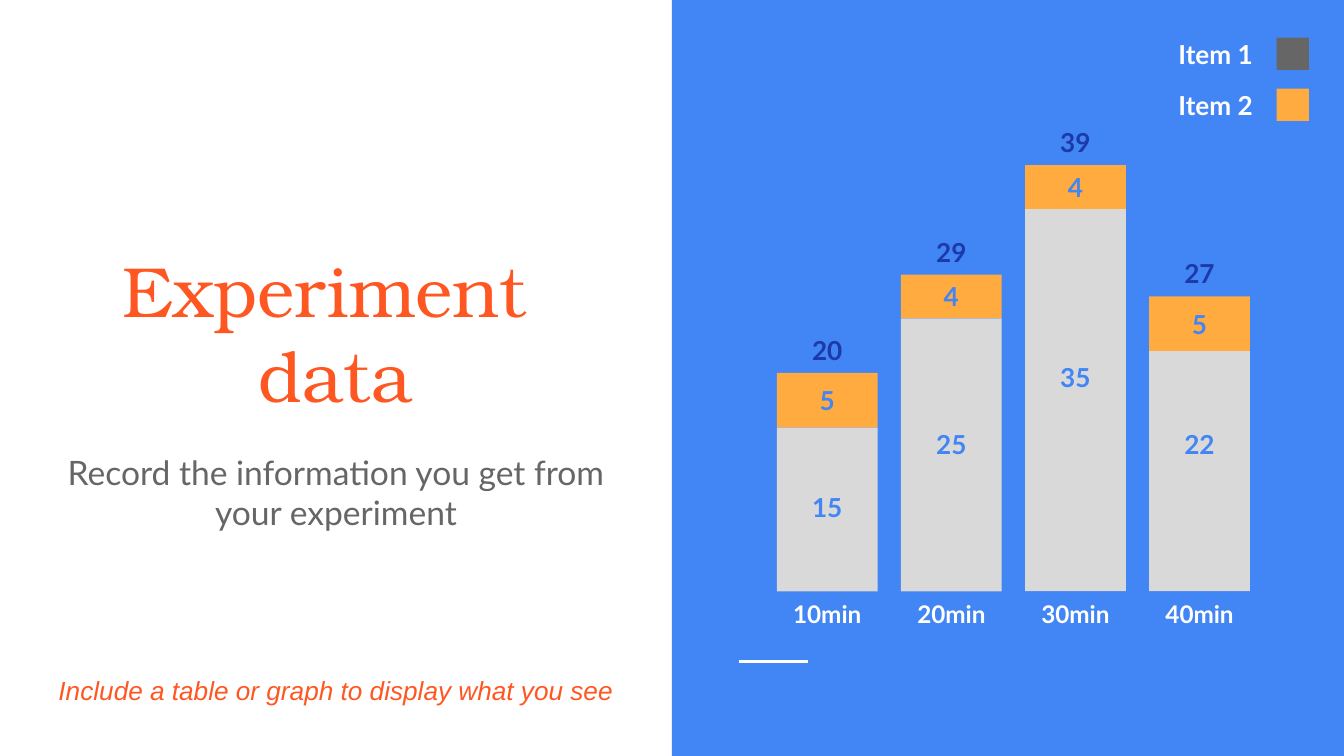
from collections import namedtuple

from lxml.etree import SubElement
from pptx import Presentation
from pptx.dml.color import RGBColor
from pptx.enum.shapes import MSO_CONNECTOR, MSO_SHAPE
from pptx.enum.text import MSO_ANCHOR, MSO_AUTO_SIZE, PP_ALIGN
from pptx.oxml.ns import qn
from pptx.util import Inches, Pt

Box = namedtuple("Box", "left top width height")
Bar = namedtuple("Bar", "label item1 item2 lift")

PAGE_WIDTH = 10
PAGE_HEIGHT = PAGE_WIDTH * 9 / 16
COLORS = {
    "white": "FFFFFF",
    "blue": "4285F4",
    "navy": "1C3AA9",
    "red": "FF5722",
    "orange": "FFAB40",
    "dark": "666666",
    "light": "D9D9D9",
}
FORMATS = {
    "title": {"size": Pt(38), "name": "TeX Gyre Bonum"},
    "subtitle": {"size": Pt(18), "name": "Lato"},
    "caption": {"size": Pt(14), "name": "Arial", "italic": True},
    "label": {"size": Pt(14), "name": "Lato", "bold": True},
    "axis": {"size": Pt(13), "name": "Lato", "bold": True},
}
BARS = [
    Bar("10min", 15, 5, 0.02),
    Bar("20min", 25, 4, 0.08),
    Bar("30min", 35, 4, 0.17),
    Bar("40min", 22, 5, 0.2),
]
LEGEND = [("Item 1", "dark"), ("Item 2", "orange")]
BAR_WIDTH = 0.75
LABEL_HEIGHT = 0.34


def rgb(color):
    """Return the named colour."""
    return RGBColor.from_string(COLORS[color])


def place(shape, box):
    """Move a shape to a box given in inches."""
    for name, value in box._asdict().items():
        setattr(shape, name, Inches(value))


def write(shape, lines, style, color, align=PP_ALIGN.CENTER, anchor=MSO_ANCHOR.MIDDLE):
    """Fill a text shape with one formatted paragraph for each line."""
    frame = shape.text_frame
    settings = {"word_wrap": True, "auto_size": MSO_AUTO_SIZE.NONE, "vertical_anchor": anchor}
    settings.update({f"margin_{side}": Inches(0.1) for side in ("left", "top", "right", "bottom")})
    for name, value in settings.items():
        setattr(frame, name, value)
    for index, line in enumerate(lines):
        para = frame.add_paragraph() if index else frame.paragraphs[0]
        para.alignment = align
        para.space_before = Pt(0)
        span = para.add_run()
        span.text = line
        for name, value in FORMATS[style].items():
            setattr(span.font, name, value)
        span.font.color.rgb = rgb(color)


def add_text(page, box, text, style, color, **layout):
    """Add a text box with a single line."""
    shape = page.shapes.add_textbox(*map(Inches, box))
    write(shape, [text], style, color, **layout)


def add_block(page, box, color):
    """Add a plain filled rectangle."""
    block = page.shapes.add_shape(MSO_SHAPE.RECTANGLE, *map(Inches, box))
    block.shadow.inherit = False
    block.fill.solid()
    block.fill.fore_color.rgb = rgb(color)
    block.line.fill.background()


def add_panel(page, box):
    """Add the coloured half with its short accent line."""
    add_block(page, box, "blue")
    left, top = box.left + 0.5, box.top + 4.92
    accent = page.shapes.add_connector(
        MSO_CONNECTOR.STRAIGHT, *map(Inches, (left, top, left + 0.51, top))
    )
    accent.line.color.rgb = rgb("white")
    accent.line.width = Pt(1.5)
    SubElement(accent._element.spPr, qn("a:effectLst"))


def add_message(page, box):
    """Place the title, subtitle and caption in one column."""
    title, subtitle = page.shapes.title, page.placeholders[1]
    place(title, box._replace(height=1.7))
    write(title, ["Experiment ", "data"], "title", "red", anchor=MSO_ANCHOR.BOTTOM)
    place(subtitle, box._replace(top=box.top + 1.76, height=1.47))
    write(
        subtitle,
        ["Record the information you get from your experiment"],
        "subtitle",
        "dark",
        anchor=MSO_ANCHOR.TOP,
    )
    add_text(
        page,
        box._replace(top=box.top + 3.42, height=0.49),
        "Include a table or graph to display what you see",
        "caption",
        "red",
        anchor=MSO_ANCHOR.TOP,
    )


def add_bar(page, box, bar, unit):
    """Stack both items of one bar upwards from the bottom of its box."""
    base = box.top + box.height
    label = box._replace(top=base, height=LABEL_HEIGHT)
    add_text(page, label, bar.label, "axis", "white")
    parts = [(bar.item1, "light", bar.lift), (bar.item2, "orange", 0)]
    for value, color, lift in parts:
        height = value * unit
        base -= height
        add_block(page, box._replace(top=base, height=height), color)
        middle = base + (height - LABEL_HEIGHT) / 2 - lift
        add_text(page, label._replace(top=middle), str(value), "label", "blue")
    total = str(bar.item1 + bar.item2)
    add_text(page, label._replace(top=base - LABEL_HEIGHT), total, "label", "navy")


def add_bars(page, box):
    """Spread the stacked bars evenly over a box as high as the tallest one."""
    unit = box.height / max(bar.item1 + bar.item2 for bar in BARS)
    step = (box.width - BAR_WIDTH) / (len(BARS) - 1)
    for index, bar in enumerate(BARS):
        slot = box._replace(left=box.left + index * step, width=BAR_WIDTH)
        add_bar(page, slot, bar, unit)


def add_legend(page, box):
    """List each item with a square swatch at the right edge."""
    side = 0.24
    step = (box.height - side) / (len(LEGEND) - 1)
    for index, (name, color) in enumerate(LEGEND):
        row = Box(box.left, box.top + index * step, box.width - side, side)
        add_text(page, row, name, "label", "white", align=PP_ALIGN.LEFT)
        add_block(page, row._replace(left=row.left + row.width, width=side), color)


def main():
    """Build and save the slide."""
    deck = Presentation()
    deck.slide_width, deck.slide_height = Inches(PAGE_WIDTH), Inches(PAGE_HEIGHT)
    page = deck.slides.add_slide(deck.slide_layouts[0])
    add_panel(page, Box(PAGE_WIDTH / 2, 0, PAGE_WIDTH / 2, PAGE_HEIGHT))
    add_message(page, Box(0.29, 1.5, 4.42, 3.91))
    add_bars(page, Box(5.78, 1.23, 3.52, 3.17))
    add_legend(page, Box(8.67, 0.28, 1.07, 0.62))
    deck.save("out.pptx")


if __name__ == "__main__":
    main()
